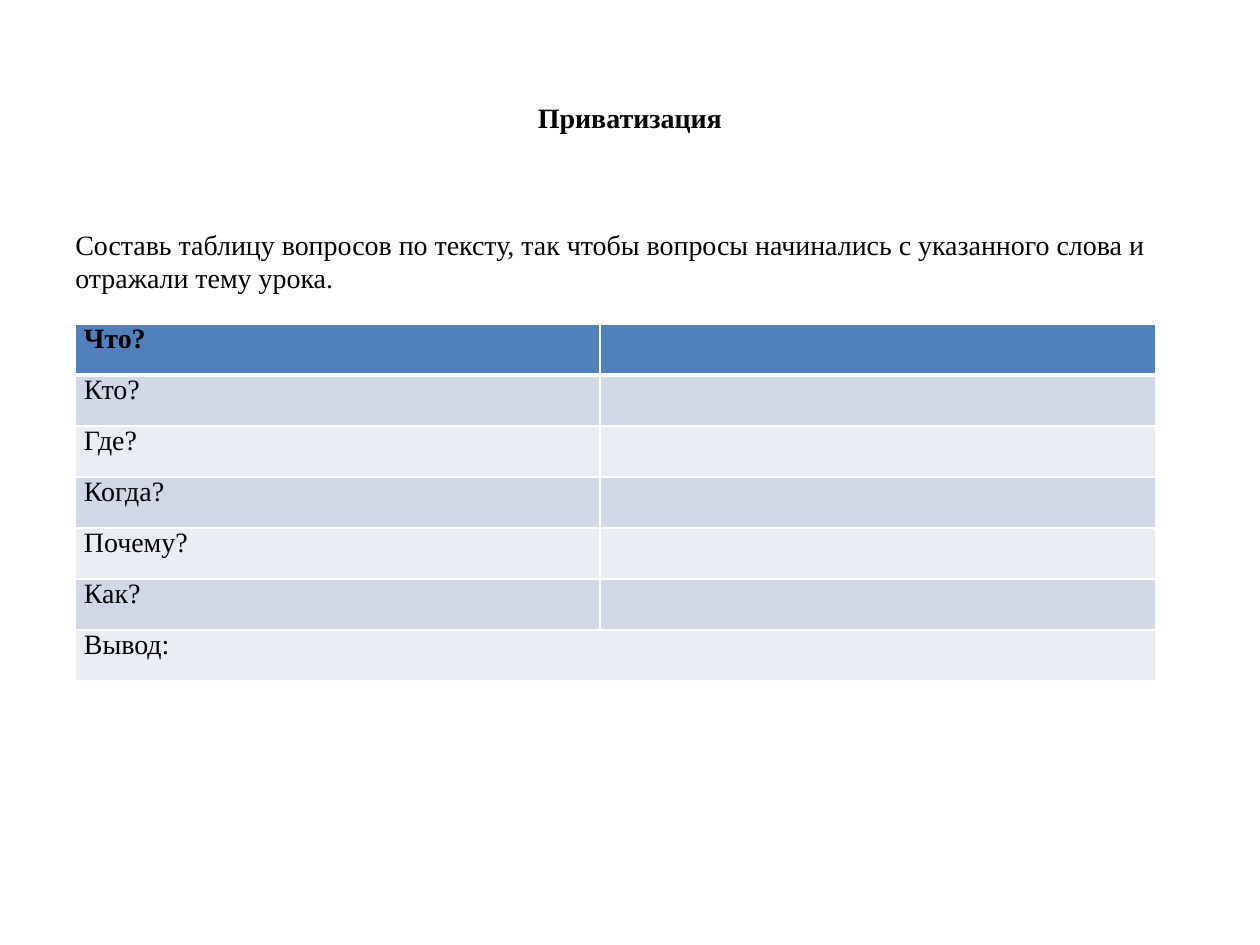
import pptx
import pptx.dml.color
import pptx.enum.text
import pptx.oxml.ns
import pptx.util
import lxml.etree

SCALE = 914400 / 126
FONT = "Times New Roman"
COLORS = {
    "text": "000000",
    "header": "4F81BD",
    "band_dark": "D0D8E8",
    "band_light": "E9EDF4",
    "border": "FFFFFF",
}
QUESTIONS = ["Что?", "Кто?", "Где?", "Когда?", "Почему?", "Как?", "Вывод:"]
COLUMN_WIDTHS = [525, 556]
ROW_HEIGHT = 51


def px(length):
    """Turn whole pixels into EMU."""
    return pptx.util.Emu(round(length * SCALE))


def color(name):
    """Look up a named colour."""
    return pptx.dml.color.RGBColor.from_string(COLORS[name])


def write_text(text_frame, text, size=16, bold=False, align="LEFT"):
    """Write one formatted paragraph."""
    paragraph = text_frame.paragraphs[0]
    paragraph.alignment = getattr(pptx.enum.text.PP_ALIGN, align)
    paragraph.font.size = pptx.util.Pt(size)
    if not text:
        return
    run = paragraph.add_run()
    run.text = text
    run.font.name = FONT
    run.font.size = pptx.util.Pt(size)
    run.font.bold = bold
    run.font.color.rgb = color("text")


def add_text(slide, box, text, anchor="TOP", **text_format):
    """Add a wrapping text box."""
    shape = slide.shapes.add_textbox(*map(px, box))
    shape.text_frame.word_wrap = True
    shape.text_frame.vertical_anchor = getattr(pptx.enum.text.MSO_ANCHOR, anchor)
    write_text(shape.text_frame, text, **text_format)


def set_borders(cell, top, bottom):
    """Draw the cell borders, with top and bottom widths in points."""
    properties = cell._tc.get_or_add_tcPr()
    for side, width in {"L": 1, "R": 1, "T": top, "B": bottom}.items():
        line = lxml.etree.SubElement(
            properties, pptx.oxml.ns.qn(f"a:ln{side}"), w=str(pptx.util.Pt(width))
        )
        fill = lxml.etree.SubElement(line, pptx.oxml.ns.qn("a:solidFill"))
        lxml.etree.SubElement(
            fill, pptx.oxml.ns.qn("a:srgbClr"), val=COLORS["border"]
        )


def format_cell(cell, row):
    """Set borders, fill and margins by row number."""
    set_borders(cell, top=3 if row == 1 else 1, bottom=3 if row == 0 else 1)
    band = "band_dark" if row % 2 else "band_light"
    cell.fill.solid()
    cell.fill.fore_color.rgb = color("header" if row == 0 else band)
    cell.margin_left = cell.margin_right = px(9)
    cell.margin_top = cell.margin_bottom = 0


def add_question_table(slide, left, top):
    """Add the table of questions with a merged last row."""
    rows, columns = len(QUESTIONS), len(COLUMN_WIDTHS)
    frame = slide.shapes.add_table(
        rows, columns, px(left), px(top),
        px(sum(COLUMN_WIDTHS)), px(rows * ROW_HEIGHT),
    )
    table = frame.table
    for column, width in zip(table.columns, COLUMN_WIDTHS):
        column.width = px(width)
    for row, question in enumerate(QUESTIONS):
        table.rows[row].height = px(ROW_HEIGHT)
        for column, text in enumerate([question, ""]):
            cell = table.cell(row, column)
            format_cell(cell, row)
            write_text(cell.text_frame, text, bold=row == 0)
    table.cell(rows - 1, 0).merge(table.cell(rows - 1, columns - 1))


def main():
    """Build and save the slide."""
    presentation = pptx.Presentation()
    presentation.slide_width = px(1260)
    presentation.slide_height = px(945)
    slide = presentation.slides.add_slide(presentation.slide_layouts[6])
    add_text(slide, (63, 38, 1134, 158), "Приватизация",
             anchor="MIDDLE", bold=True, align="CENTER")
    add_text(slide, (63, 221, 1134, 624),
             "Составь таблицу вопросов по тексту, так чтобы вопросы начинались "
             "с указанного слова и отражали тему урока.")
    add_question_table(slide, left=75, top=324)
    presentation.save("out.pptx")


if __name__ == "__main__":
    main()
